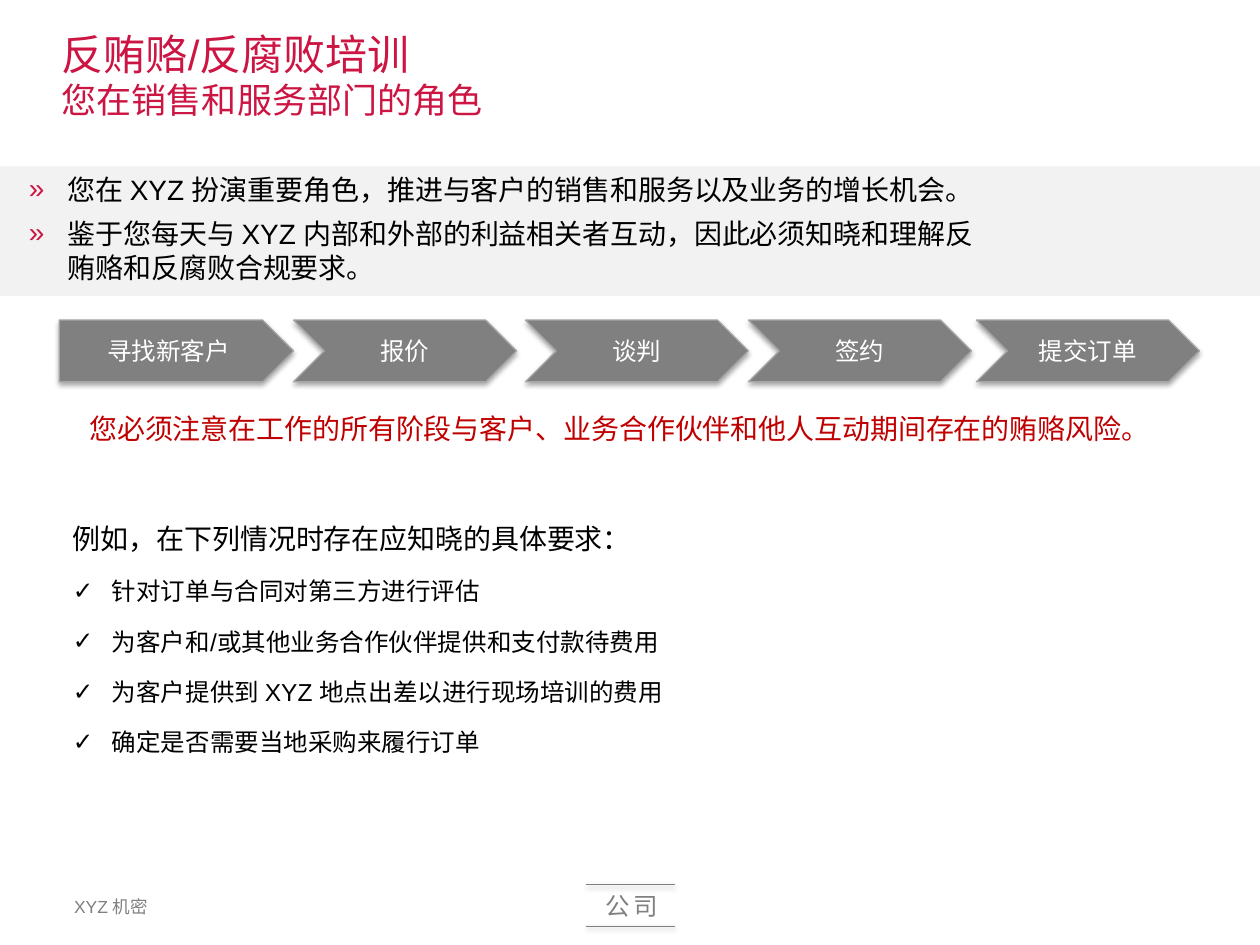
from lxml.etree import SubElement
from pptx import Presentation
from pptx.dml.color import RGBColor
from pptx.enum.shapes import MSO_CONNECTOR, MSO_SHAPE
from pptx.enum.text import MSO_ANCHOR, MSO_AUTO_SIZE, PP_ALIGN
from pptx.oxml.ns import qn
from pptx.util import Inches, Pt

CRIMSON = RGBColor(0xCC, 0x15, 0x43)
RED = RGBColor(0xC0, 0x00, 0x00)
BLACK = RGBColor(0x00, 0x00, 0x00)
WHITE = RGBColor(0xFF, 0xFF, 0xFF)
GRAY = RGBColor(0x80, 0x80, 0x80)
EDGE = RGBColor(0xA5, 0xA5, 0xA5)
BAND = RGBColor(0xF2, 0xF2, 0xF2)

STEPS = [(0.47, "寻找新客户"), (2.33, "报价"), (4.17, "谈判"), (5.94, "签约"), (7.75, "提交订单")]
ROLES = [
    "您在 XYZ 扮演重要角色，推进与客户的销售和服务以及业务的增长机会。",
    "鉴于您每天与 XYZ 内部和外部的利益相关者互动，因此必须知晓和理解反\v贿赂和反腐败合规要求。",
]
CASES = [
    "针对订单与合同对第三方进行评估",
    "为客户和/或其他业务合作伙伴提供和支付款待费用",
    "为客户提供到 XYZ 地点出差以进行现场培训的费用",
    "确定是否需要当地采购来履行订单",
]


class SlideBuilder:
    font_name = "Arial"

    def __init__(self, slide):
        self.slide = slide

    def add_lines(self, frame, lines, size, color, bullet=None, gap=0, align=PP_ALIGN.LEFT, append=False):
        for index, line in enumerate(lines):
            first = index == 0 and not append
            para = frame.paragraphs[0] if first else frame.add_paragraph()
            para.text = line
            if bullet:
                self.add_bullet(para, *bullet)
            layout = {
                "alignment": align,
                "space_before": Pt(0 if first else gap),
                "space_after": Pt(gap),
            }
            for name, value in layout.items():
                setattr(para, name, value)
            for span in para.runs:
                style = {"name": self.font_name, "size": Pt(size)}
                for name, value in style.items():
                    setattr(span.font, name, value)
                span.font.color.rgb = color

    def add_bullet(self, para, symbol, color):
        properties = para._p.get_or_add_pPr()
        properties.set("marL", str(Inches(0.44 if symbol == "»" else 0.31)))
        properties.set("indent", str(Inches(-0.31)))
        tint = SubElement(properties, qn("a:buClr"))
        SubElement(tint, qn("a:srgbClr"), val=str(color))
        SubElement(properties, qn("a:buFont"), typeface=self.font_name)
        SubElement(properties, qn("a:buChar"), char=symbol)

    def add_shadow(self, shape, opacity, distance):
        effects = SubElement(shape._element.spPr, qn("a:effectLst"))
        shadow = SubElement(
            effects, qn("a:outerShdw"), blurRad=str(Pt(3.1)), dist=str(Pt(distance)),
            dir="5400000", rotWithShape="0",
        )
        color = SubElement(shadow, qn("a:srgbClr"), val="000000")
        SubElement(color, qn("a:alpha"), val=str(opacity * 1000))

    def title(self, area, heading, subtitle):
        box = self.slide.shapes.title
        for name, value in zip(("left", "top", "width", "height"), area):
            setattr(box, name, Inches(value))
        frame = box.text_frame
        settings = {"word_wrap": True, "auto_size": MSO_AUTO_SIZE.NONE, "vertical_anchor": MSO_ANCHOR.MIDDLE}
        for name, value in settings.items():
            setattr(frame, name, value)
        self.add_lines(frame, [heading], 24, CRIMSON)
        self.add_lines(frame, [subtitle], 20, CRIMSON, append=True)

    def text(self, area, lines, size, color, anchor=MSO_ANCHOR.TOP, **options):
        box = self.slide.shapes.add_textbox(*map(Inches, area))
        frame = box.text_frame
        frame.word_wrap = True
        frame.vertical_anchor = anchor
        self.add_lines(frame, lines, size, color, **options)
        return frame

    def band(self, area, lines):
        box = self.slide.shapes.add_shape(MSO_SHAPE.RECTANGLE, *map(Inches, area))
        box.shadow.inherit = False
        box.fill.solid()
        box.fill.fore_color.rgb = BAND
        box.line.fill.background()
        box.text_frame.vertical_anchor = MSO_ANCHOR.TOP
        self.add_lines(box.text_frame, lines, 16, BLACK, bullet=("»", CRIMSON), gap=3)

    def step(self, kind, area, label):
        arrow = self.slide.shapes.add_shape(kind, *map(Inches, area))
        arrow.fill.solid()
        arrow.fill.fore_color.rgb = GRAY
        arrow.line.color.rgb = EDGE
        arrow.line.width = Pt(0.75)
        self.add_shadow(arrow, 35, 1.8)
        arrow.text_frame.vertical_anchor = MSO_ANCHOR.MIDDLE
        self.add_lines(arrow.text_frame, [label], 14, WHITE, align=PP_ALIGN.CENTER)

    def rule(self, left, right, top):
        line = self.slide.shapes.add_connector(
            MSO_CONNECTOR.STRAIGHT, Inches(left), Inches(top), Inches(right), Inches(top)
        )
        line.line.color.rgb = GRAY
        line.line.width = Pt(0.5)
        self.add_shadow(line, 38, 1.6)


def main():
    deck = Presentation()
    deck.slide_width, deck.slide_height = Inches(10), Inches(7.5)
    page = SlideBuilder(deck.slides.add_slide(deck.slide_layouts[5]))

    page.text((0.49, 7.06, 1.63, 0.27), ["XYZ 机密"], 10, GRAY, anchor=MSO_ANCHOR.MIDDLE)
    company = page.text((4.61, 7.02, 0.81, 0.33), ["公司"], 14, GRAY, align=PP_ALIGN.CENTER)
    company.paragraphs[0].runs[0].font._element.set("spc", "200")
    for top in (7.35, 7.02):
        page.rule(4.65, 5.36, top)

    page.title((0.39, 0.41, 9.06, 0.36), "反贿赂/反腐败培训", "您在销售和服务部门的角色")
    page.band((0, 1.32, 10, 1.03), ROLES)
    for index, (left, label) in enumerate(STEPS):
        kind, width = (MSO_SHAPE.CHEVRON, 1.77) if index else (MSO_SHAPE.PENTAGON, 1.86)
        page.step(kind, (left, 2.54, width, 0.49), label)

    page.text(
        (0.43, 3.22, 8.98, 0.63),
        ["您必须注意在工作的所有阶段与客户、业务合作伙伴和他人互动期间存在的贿赂风险。"],
        16, RED, align=PP_ALIGN.CENTER, gap=6,
    )
    examples = page.text(
        (0.48, 4.09, 8.98, 1.97), ["例如，在下列情况时存在应知晓的具体要求："], 16, BLACK, gap=6
    )
    page.add_lines(examples, CASES, 14, BLACK, bullet=("✓", BLACK), gap=6, append=True)
    deck.save("out.pptx")


if __name__ == "__main__":
    main()
